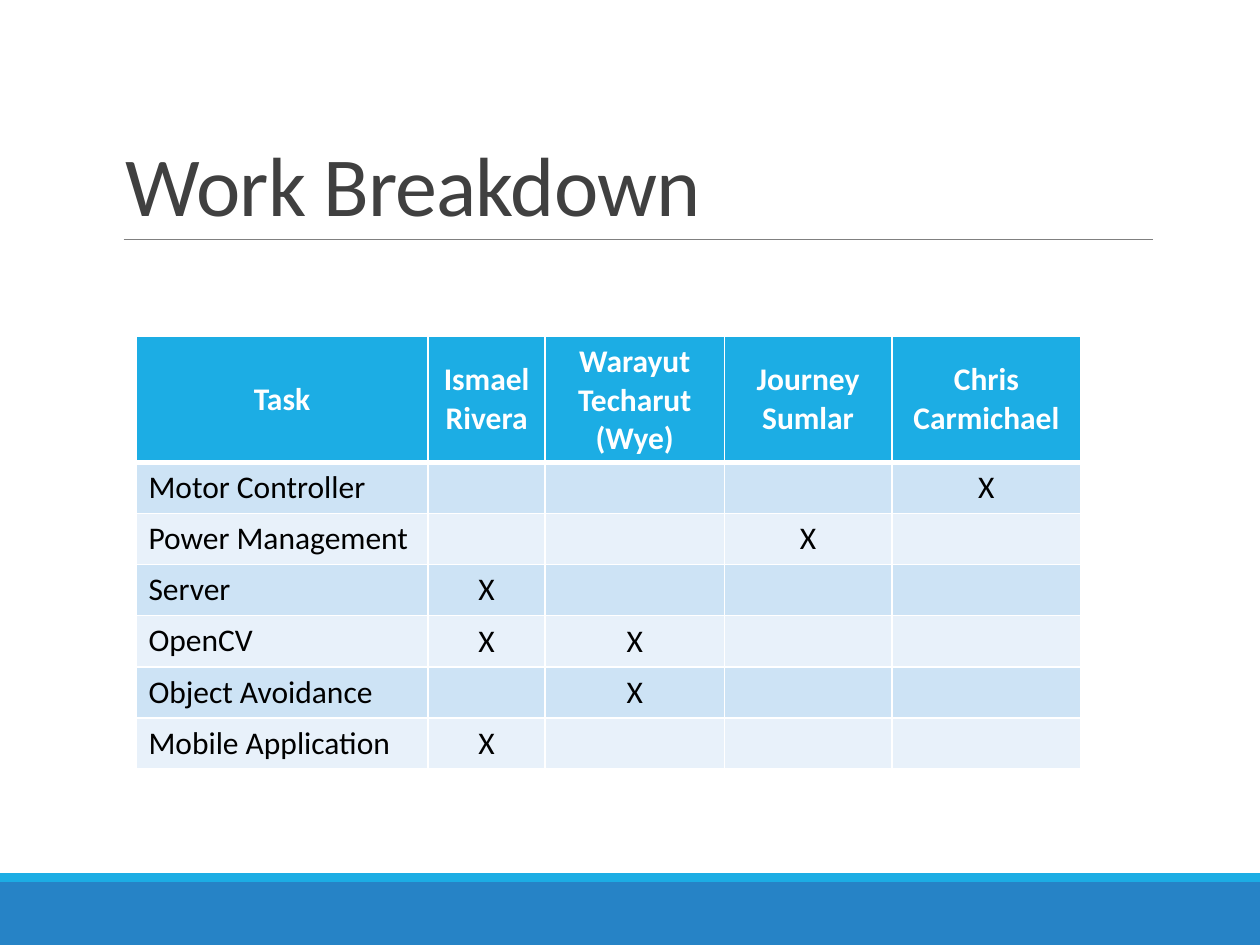
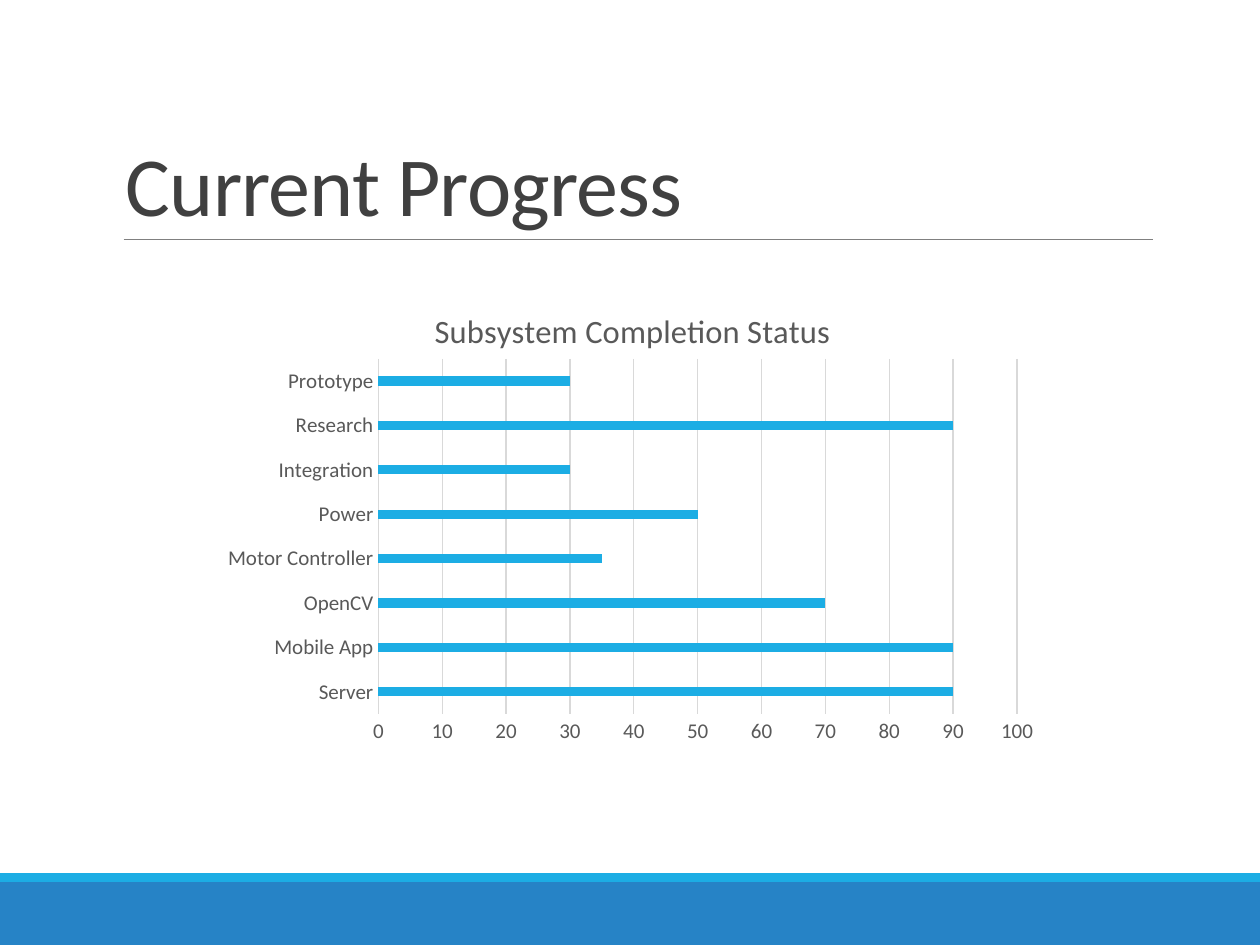
from dataclasses import dataclass

from lxml.etree import SubElement
from pptx import Presentation
from pptx.chart.data import CategoryChartData
from pptx.dml.color import RGBColor
from pptx.enum.chart import XL_CHART_TYPE, XL_TICK_MARK
from pptx.enum.shapes import MSO_CONNECTOR, MSO_SHAPE
from pptx.enum.text import MSO_ANCHOR, PP_ALIGN
from pptx.oxml import parse_xml
from pptx.oxml.ns import nsdecls, qn
from pptx.util import Cm, Pt

FONT = "Calibri"
COLORS = {
    "blue": "2683C6",
    "cyan": "1CADE4",
    "teal": "28C4CC",
    "rule": "808080",
    "title": "404040",
    "label": "595959",
    "grid": "D9D9D9",
    "white": "FFFFFF",
    "black": "000000",
    "row_dark": "CDE3F5",
    "row_light": "E8F1FA",
}
PAGE_WIDTH, PAGE_HEIGHT = 25.4, 19.05


@dataclass(frozen=True)
class Band:
    top: float
    height: float
    color: str


@dataclass(frozen=True)
class Task:
    name: str
    owners: tuple[str, ...]


@dataclass(frozen=True)
class Subsystem:
    name: str
    percent: int


BANDS = [Band(17.78, 1.27, "blue"), Band(17.6, 0.18, "cyan")]

MEMBERS = ["Ismael Rivera", "Warayut Techarut (Wye)", "Journey Sumlar", "Chris Carmichael"]
ISMAEL, WYE, JOURNEY, CHRIS = MEMBERS
TASKS = [
    Task("Motor Controller", (CHRIS,)),
    Task("Power Management", (JOURNEY,)),
    Task("Server", (ISMAEL,)),
    Task("OpenCV", (ISMAEL, WYE)),
    Task("Object Avoidance", (WYE,)),
    Task("Mobile Application", (ISMAEL,)),
]
COLUMN_WIDTHS = [5.89, 2.36, 3.61, 3.38, 3.81]
HEADER_HEIGHT, ROW_HEIGHT = 2.54, 1.03

SUBSYSTEMS = [
    Subsystem("Server", 90),
    Subsystem("Mobile App", 90),
    Subsystem("OpenCV", 70),
    Subsystem("Motor Controller", 35),
    Subsystem("Power", 50),
    Subsystem("Integration", 30),
    Subsystem("Research", 90),
    Subsystem("Prototype", 30),
]


def rgb(name: str) -> RGBColor:
    return RGBColor.from_string(COLORS[name])


def style_font(font, size: float, color: str, bold: bool = False) -> None:
    font.name, font.size, font.bold = FONT, Pt(size), bold
    font.color.rgb = rgb(color)


# Shared page: footer bands, title and rule
def add_band(page, band: Band) -> None:
    box = page.shapes.add_shape(
        MSO_SHAPE.RECTANGLE, 0, Cm(band.top), Cm(PAGE_WIDTH), Cm(band.height))
    box.shadow.inherit = False
    box.fill.solid()
    box.fill.fore_color.rgb = rgb(band.color)
    box.line.fill.background()


def add_page(deck, title: str):
    page = deck.slides.add_slide(deck.slide_layouts[6])
    for band in BANDS:
        add_band(page, band)

    rule = page.shapes.add_connector(
        MSO_CONNECTOR.STRAIGHT, Cm(2.49), Cm(4.83), Cm(23.24), Cm(4.83))
    rule.line.color.rgb = rgb("rule")
    rule.line.width = Pt(0.5)
    SubElement(rule.element.spPr, qn("a:effectLst"))

    box = page.shapes.add_textbox(Cm(2.29), Cm(0.79), Cm(20.96), Cm(4.04))
    frame = box.text_frame
    frame.word_wrap = True
    frame.vertical_anchor = MSO_ANCHOR.BOTTOM
    frame.text = title
    para = frame.paragraphs[0]
    para.line_spacing = 0.85
    span = para.runs[0]
    style_font(span.font, 48, "title")
    span.font.element.set("spc", "-50") if hasattr(span.font, "element") else \
        span._r.get_or_add_rPr().set("spc", "-50")
    return page


# Work table
def set_borders(cell, bottom: float, top: float) -> None:
    properties = cell._tc.get_or_add_tcPr()
    widths = {"lnL": 1, "lnR": 1, "lnT": top, "lnB": bottom}
    for index, (side, width) in enumerate(widths.items()):
        properties.insert(index, parse_xml(
            f'<a:{side} {nsdecls("a")} w="{Pt(width)}"><a:solidFill>'
            f'<a:srgbClr val="{COLORS["white"]}"/></a:solidFill></a:{side}>'))


def fill_cell(cell, text: str, row: int, column: int) -> None:
    header = row == 0
    cell.fill.solid()
    cell.fill.fore_color.rgb = rgb(
        "cyan" if header else "row_dark" if row % 2 else "row_light")
    set_borders(cell, bottom=3 if header else 1, top=3 if row == 1 else 1)
    cell.text = text
    para = cell.text_frame.paragraphs[0]
    style_font(para.font, 18, "white" if header else "black", header)
    for span in para.runs:
        style_font(span.font, 18, "white" if header else "black", header)
    if header or column:
        cell.vertical_anchor = MSO_ANCHOR.MIDDLE
        para.alignment = PP_ALIGN.CENTER


def add_work_table(page) -> None:
    rows = [["Task", *MEMBERS]]
    for task in TASKS:
        rows.append([task.name, *("X" if name in task.owners else "" for name in MEMBERS)])
    heights = [HEADER_HEIGHT] + [ROW_HEIGHT] * len(TASKS)
    table = page.shapes.add_table(
        len(rows), len(COLUMN_WIDTHS), Cm(2.74), Cm(6.78),
        Cm(sum(COLUMN_WIDTHS)), Cm(sum(heights))).table
    for column, width in zip(table.columns, COLUMN_WIDTHS):
        column.width = Cm(width)
    for row, height in zip(table.rows, heights):
        row.height = Cm(height)
    for row, texts in enumerate(rows):
        for column, text in enumerate(texts):
            fill_cell(table.cell(row, column), text, row, column)


# Progress chart
def set_layout(element, index: int, target: str = "", **place: float) -> None:
    for old in element.findall(qn("c:layout")):
        element.remove(old)
    layout = parse_xml(f'<c:layout {nsdecls("c")}><c:manualLayout/></c:layout>')
    settings = {"layoutTarget": target} if target else {}
    settings |= {"xMode": "edge", "yMode": "edge", **place}
    for name, value in settings.items():
        SubElement(layout[0], qn(f"c:{name}")).set("val", str(value))
    element.insert(index, layout)


def style_axis(axis) -> None:
    axis.major_tick_mark = axis.minor_tick_mark = XL_TICK_MARK.NONE
    style_font(axis.tick_labels.font, 12, "label")


def add_progress_chart(page) -> None:
    data = CategoryChartData()
    data.categories = [item.name for item in SUBSYSTEMS]
    blanks = [None] * len(SUBSYSTEMS)
    data.add_series("Series 1", blanks)
    data.add_series("Series 2", [item.percent for item in SUBSYSTEMS])
    data.add_series("Series 3", blanks)
    chart = page.shapes.add_chart(
        XL_CHART_TYPE.BAR_CLUSTERED, Cm(4.24), Cm(5.61), Cm(16.94), Cm(9.55), data).chart
    style_font(chart.font, 10, "black")
    chart.has_legend = False

    chart.has_title = True
    frame = chart.chart_title.text_frame
    frame.text = "Subsystem Completion Status"
    style_font(frame.paragraphs[0].runs[0].font, 18.6, "label")

    plot = chart.plots[0]
    plot.gap_width, plot.overlap = 182, 0
    plot.vary_by_categories = False
    for series, color in zip(plot.series, ["cyan", "cyan", "teal"]):
        series.format.fill.solid()
        series.format.fill.fore_color.rgb = rgb(color)

    categories, values = chart.category_axis, chart.value_axis
    style_axis(categories)
    style_axis(values)
    values.minimum_scale, values.maximum_scale, values.major_unit = 0, 100, 10
    values.has_major_gridlines = True
    values.format.line.fill.background()
    for line in (categories.format.line, values.major_gridlines.format.line):
        line.color.rgb = rgb("grid")
        line.width = Pt(0.75)

    root = chart.element
    set_layout(root.find(f'.//{qn("c:title")}'), 1, x=0.26, y=0.05)
    set_layout(root.find(f'.//{qn("c:plotArea")}'), 0, "inner", x=0.2, y=0.17, w=0.76, h=0.75)


def main() -> None:
    deck = Presentation()
    deck.slide_width, deck.slide_height = Cm(PAGE_WIDTH), Cm(PAGE_HEIGHT)
    add_work_table(add_page(deck, "Work Breakdown"))
    add_progress_chart(add_page(deck, "Current Progress"))
    deck.save("out.pptx")


if __name__ == "__main__":
    main()
